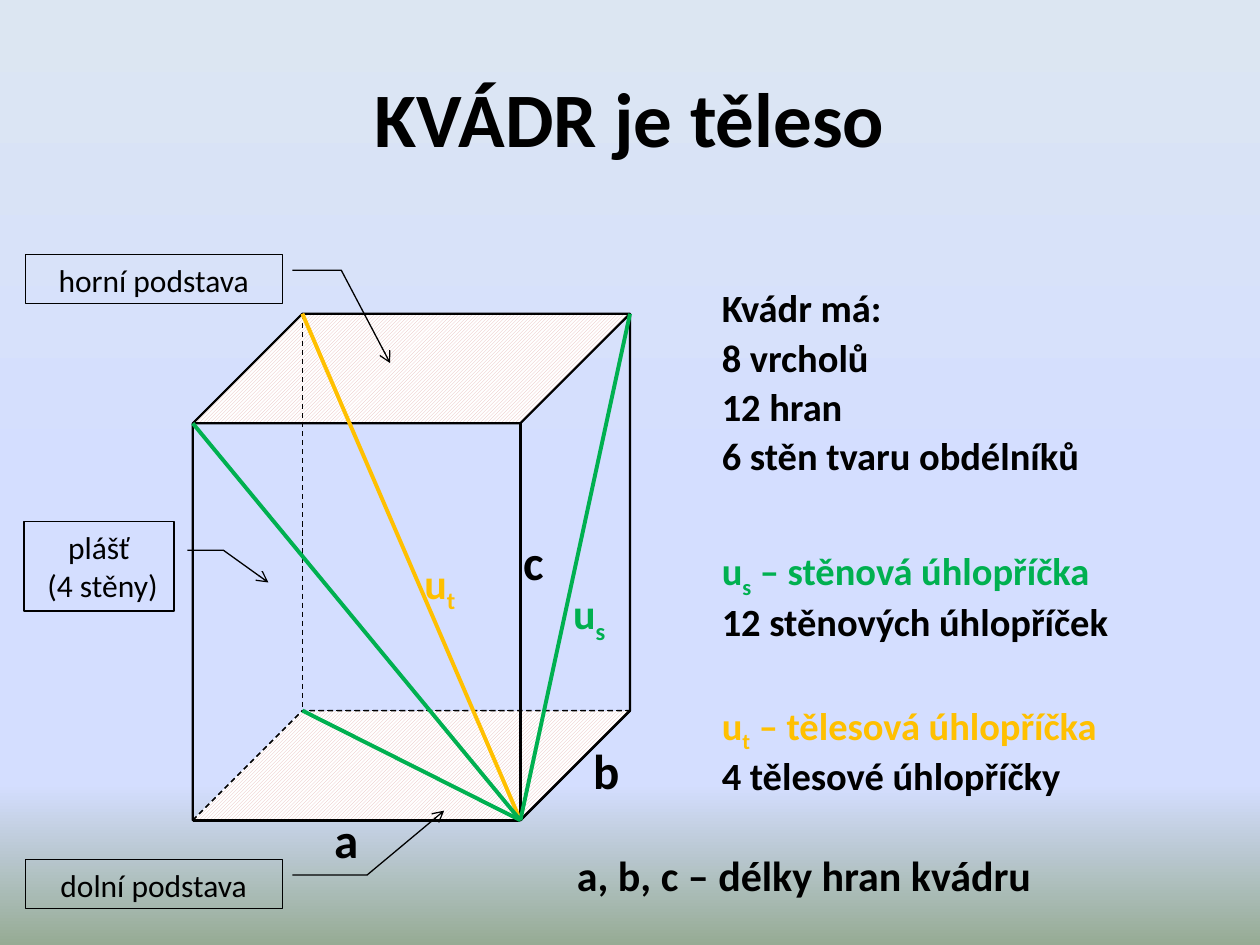
from dataclasses import dataclass

from lxml.etree import SubElement
from pptx import Presentation
from pptx.dml.color import RGBColor
from pptx.enum.dml import MSO_LINE_DASH_STYLE as Dash, MSO_PATTERN_TYPE as Pattern
from pptx.enum.shapes import MSO_CONNECTOR as Connector, MSO_SHAPE as Preset
from pptx.enum.text import MSO_ANCHOR as Anchor, PP_ALIGN as Align
from pptx.oxml.ns import qn
from pptx.util import Inches, Pt

BLACK = RGBColor(0x00, 0x00, 0x00)
WHITE = RGBColor(0xFF, 0xFF, 0xFF)
GREEN = RGBColor(0x00, 0xB0, 0x50)
AMBER = RGBColor(0xFF, 0xC0, 0x00)
PINK = RGBColor(0xE6, 0xB9, 0xB8)
SKY = RGBColor(0xDC, 0xE6, 0xF2)
LAVENDER = RGBColor(0xD4, 0xDE, 0xFF)
SAGE = RGBColor(0x96, 0xAB, 0x94)
BACKGROUND_STOPS = [(0, SKY), (53, LAVENDER), (83, LAVENDER), (100, SAGE)]

FONT = "Calibri"
COLUMNS, ROWS = 100, 75
CELL = Inches(0.1)

# The cuboid, in columns and rows of the grid
LEFT, TOP, WIDTH, HEIGHT, DEPTH = 15.3, 24.9, 34.7, 40.2, 8.7
RIGHT, BOTTOM = LEFT + WIDTH, TOP + HEIGHT
FRONT_RIGHT, FRONT_TOP = RIGHT - DEPTH, TOP + DEPTH
BACK_LEFT, BACK_BOTTOM = LEFT + DEPTH, BOTTOM - DEPTH

Point = tuple[float, float]
Box = tuple[float, float, float, float]

CORNER: Point = (FRONT_RIGHT, BOTTOM)
FRONT_LOW_LEFT: Point = (LEFT, BOTTOM)
FRONT_HIGH_LEFT: Point = (LEFT, FRONT_TOP)
FRONT_HIGH_RIGHT: Point = (FRONT_RIGHT, FRONT_TOP)
BACK_LOW_LEFT: Point = (BACK_LEFT, BACK_BOTTOM)
BACK_LOW_RIGHT: Point = (RIGHT, BACK_BOTTOM)
BACK_HIGH_LEFT: Point = (BACK_LEFT, TOP)
BACK_HIGH_RIGHT: Point = (RIGHT, TOP)


@dataclass
class Segment:
    start: Point
    end: Point
    color: RGBColor = BLACK
    weight: float = 2.25
    dashed: bool = False


@dataclass
class Line:
    text: str
    color: RGBColor = BLACK
    gap: float = 0.2  # space before, as a share of the text size


@dataclass
class Label:
    box: Box
    lines: list[Line]
    size: int


@dataclass
class Callout:
    box: Box
    lines: list[Line]
    leader: list[float]


DIAGONALS = [
    Segment(CORNER, BACK_HIGH_LEFT, AMBER),
    Segment(CORNER, BACK_HIGH_RIGHT, GREEN),
    Segment(CORNER, FRONT_HIGH_LEFT, GREEN),
    Segment(CORNER, BACK_LOW_LEFT, GREEN),
]
HIDDEN_EDGES = [
    Segment(end, BACK_LOW_LEFT, weight=0.75, dashed=True)
    for end in (BACK_HIGH_LEFT, BACK_LOW_RIGHT, FRONT_LOW_LEFT)
]
NAMED_EDGES = [
    Segment(CORNER, end, weight=1.5)
    for end in (FRONT_HIGH_RIGHT, BACK_LOW_RIGHT, FRONT_LOW_LEFT)
]
LABELS = [
    Label((40.6, 42.2, 4.7, 6.6), [Line("c")], 28),
    Label((46.1, 58.8, 4.7, 6.6), [Line("b")], 28),
    Label((25.6, 64.3, 4.7, 6.6), [Line("a")], 28),
    Label((44.8, 67.4, 42.5, 4.7), [Line("a, b, c – délky hran kvádru")], 24),
    Label((44.5, 46.2, 6.3, 6.6), [Line("u_s", GREEN)], 24),
    Label((32.7, 43.8, 4.7, 6.6), [Line("u_t", AMBER)], 24),
    Label((56.3, 22.5, 36.2, 16.5), [
        Line("Kvádr má:"),
        Line("8 vrcholů"),
        Line("12 hran"),
        Line("6 stěn tvaru obdélníků"),
    ], 22),
    Label((56.3, 43, 42.9, 21.2), [
        Line("u_s – stěnová úhlopříčka", GREEN),
        Line("12 stěnových úhlopříček"),
        Line("u_t – tělesová úhlopříčka", AMBER, gap=1.5),
        Line("4 tělesové úhlopříčky"),
    ], 22),
]
CALLOUTS = [
    Callout((2, 20.2, 20.4, 3.9), [Line("horní podstava")],
            [0.32, 1.04, 0.32, 1.23, 2.21, 1.42]),
    Callout((1.9, 41.4, 11.9, 7.1), [Line("plášť"), Line(" (4 stěny)")],
            [0.32, 1.09, 0.32, 1.33, 0.68, 1.63]),
    Callout((2, 68.2, 20.4, 3.9), [Line("dolní podstava")],
            [0.32, 1.04, 0.32, 1.33, -0.99, 1.63]),
]


def cells(*lengths: float) -> list[int]:
    return [round(length * CELL) for length in lengths]


def write_text(frame, lines: list[Line], *, size: int, bold: bool = True,
               align=Align.LEFT, anchor=Anchor.TOP, spacing: float = 1.0,
               gaps: bool = False) -> None:
    """Write one paragraph per line; the letter after "_" is a subscript."""
    frame.word_wrap = True
    frame.vertical_anchor = anchor
    for index, line in enumerate(lines):
        paragraph = frame.add_paragraph() if index else frame.paragraphs[0]
        paragraph.alignment = align
        paragraph.line_spacing = spacing
        paragraph.space_before = Pt(line.gap * size if gaps else 0)
        base, _, rest = line.text.partition("_")
        for part, offset in ((base, 0), (rest[:1], -25000), (rest[1:], 0)):
            if not part:
                continue
            run = paragraph.add_run()
            run.text = part
            run.font.name, run.font.size, run.font.bold = FONT, Pt(size), bold
            run.font.color.rgb = line.color
            if offset:
                run.font._element.set("baseline", str(offset))


def paint_background(slide) -> None:
    fill = slide.background.fill
    fill.gradient()
    fill.gradient_angle = 270
    stops = slide.element.xpath(".//a:gsLst")[0]
    stops.clear()
    for percent, color in BACKGROUND_STOPS:
        stop = SubElement(stops, qn("a:gs"), pos=str(percent * 1000))
        SubElement(stop, qn("a:srgbClr"), val=str(color))


def draw_segment(slide, segment: Segment) -> None:
    connector = slide.shapes.add_connector(
        Connector.STRAIGHT, *cells(*segment.start, *segment.end))
    connector.line.color.rgb = segment.color
    connector.line.width = Pt(segment.weight)
    if segment.dashed:
        connector.line.dash_style = Dash.DASH
    SubElement(connector.element.spPr, qn("a:effectLst"))


def draw_outline(slide, preset, box: Box, adjustments: list[float], weight: float = 0.75):
    """Add an unfilled preset shape with a black line."""
    shape = slide.shapes.add_shape(preset, *cells(*box))
    for index, value in enumerate(adjustments):
        shape.adjustments[index] = value
    shape.shadow.inherit = False
    shape.fill.background()
    shape.line.color.rgb = BLACK
    shape.line.width = Pt(weight)
    return shape


def draw_base(slide, top: float, dashed: bool) -> None:
    shape = draw_outline(slide, Preset.PARALLELOGRAM, (LEFT, top, WIDTH, DEPTH), [1])
    shape.fill.patterned()
    shape.fill.pattern = Pattern.DARK_UPWARD_DIAGONAL
    shape.fill.fore_color.rgb = PINK
    shape.fill.back_color.rgb = WHITE
    if dashed:
        shape.line.dash_style = Dash.DASH


def draw_callout(slide, callout: Callout) -> None:
    shape = draw_outline(slide, Preset.LINE_CALLOUT_2, callout.box, callout.leader)
    SubElement(shape.element.xpath(".//a:ln")[0], qn("a:tailEnd"), type="arrow")
    write_text(shape.text_frame, callout.lines, size=18, bold=False, align=Align.CENTER)


def draw_label(slide, label: Label) -> None:
    text_box = slide.shapes.add_textbox(*cells(*label.box))
    write_text(text_box.text_frame, label.lines, size=label.size, spacing=0.9, gaps=True)


def main() -> None:
    presentation = Presentation()
    presentation.slide_width, presentation.slide_height = cells(COLUMNS, ROWS)
    slide = presentation.slides.add_slide(presentation.slide_layouts[5])
    paint_background(slide)

    title = slide.shapes.title
    title.left, title.top, title.width, title.height = cells(5, 3, 90, 12.5)
    write_text(title.text_frame, [Line("KVÁDR je těleso")], size=44,
               align=Align.CENTER, anchor=Anchor.MIDDLE)

    draw_base(slide, BACK_BOTTOM, dashed=True)
    draw_base(slide, TOP, dashed=False)
    draw_outline(slide, Preset.CUBE, (LEFT, TOP, WIDTH, HEIGHT), [DEPTH / WIDTH], 1.25)
    for segment in HIDDEN_EDGES + NAMED_EDGES + DIAGONALS:
        draw_segment(slide, segment)
    for callout in CALLOUTS:
        draw_callout(slide, callout)
    for label in LABELS:
        draw_label(slide, label)
    presentation.save("out.pptx")


if __name__ == "__main__":
    main()
